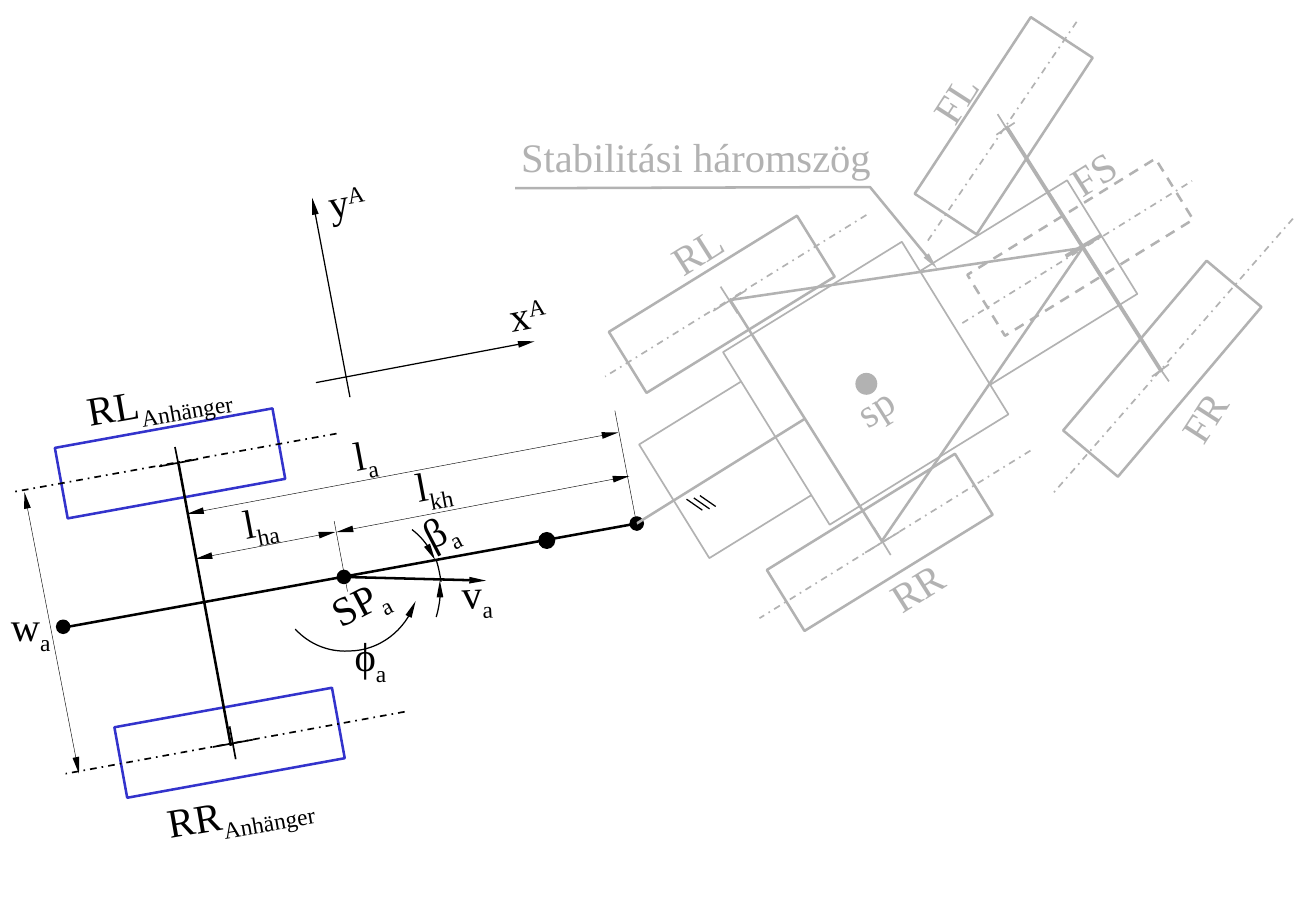
import dataclasses
import lxml.etree
import pptx
import pptx.dml.color
import pptx.enum.dml
import pptx.enum.shapes
import pptx.enum.text
import pptx.oxml.ns
import pptx.util

BLACK, GREY, BLUE, WHITE = "000000", "B2B2B2", "3333CC", "FFFFFF"
DASH_DOT = pptx.enum.dml.MSO_LINE.DASH_DOT
DASH = pptx.enum.dml.MSO_LINE.DASH
RECTANGLE = pptx.enum.shapes.MSO_SHAPE.RECTANGLE
OVAL = pptx.enum.shapes.MSO_SHAPE.OVAL
SUB, SUPER = -25000, 30000


def rgb(value):
    """Turn a hex string into a colour."""
    return pptx.dml.color.RGBColor.from_string(value)


def apply(target, values):
    """Set attributes of an object from a dict."""
    for name, value in values.items():
        setattr(target, name, value)


def add_child(parent, tag, **attributes):
    """Append a DrawingML element with the given attributes."""
    lxml.etree.SubElement(parent, pptx.oxml.ns.qn(tag), attributes)


def paint(shape, color, weight, dash=None, arrows=""):
    """Style an outline and put arrowheads at its head or tail."""
    shape.line.color.rgb = rgb(color)
    apply(shape.line, {"width": pptx.util.Pt(weight), "dash_style": dash})
    for end in ("head", "tail"):
        if end in arrows:
            add_child(shape.line._get_or_add_ln(), f"a:{end}End", type="triangle", w="sm", len="lg")


@dataclasses.dataclass
class Region:
    """A drawing area whose parts are placed from its left top corner."""

    shapes: object
    left: float
    top: float
    color: str

    def point(self, x, y):
        """Give the slide position of a point in the region."""
        return pptx.util.Inches(self.left + x), pptx.util.Inches(self.top + y)

    def line(self, x1, y1, x2, y2, weight=1, dash=None, arrows=""):
        """Draw a straight line."""
        link = self.shapes.add_connector(
            pptx.enum.shapes.MSO_CONNECTOR.STRAIGHT, *self.point(x1, y1), *self.point(x2, y2))
        paint(link, self.color, weight, dash, arrows)
        add_child(link._element.spPr, "a:effectLst")

    def preset(self, kind, x, y, width, height, turn=0, weight=1.5, color=None, fill=None, dash=None):
        """Draw a rectangle or an ellipse."""
        shape = self.shapes.add_shape(
            kind, *self.point(x, y), pptx.util.Inches(width), pptx.util.Inches(height))
        shape.rotation = turn
        shape.shadow.inherit = False
        if fill:
            shape.fill.solid()
            shape.fill.fore_color.rgb = rgb(fill)
        else:
            shape.fill.background()
        paint(shape, color or self.color, weight, dash)

    def dot(self, x, y, size):
        """Draw a filled point around a centre."""
        self.preset(OVAL, x - size / 2, y - size / 2, size, size, weight=0.75, fill=self.color)

    def outline(self, points, weight, arrows=""):
        """Draw an open line through points."""
        start, *rest = [self.point(*point) for point in points]
        builder = self.shapes.build_freeform(*start, scale=1.0)
        builder.add_line_segments(rest, close=False)
        shape = builder.convert_to_shape()
        shape.shadow.inherit = False
        shape.fill.background()
        paint(shape, self.color, weight, arrows=arrows)

    def curve(self, controls, arrows=""):
        """Draw a chain of cubic curves."""
        points, steps = [controls[0]], 16
        for first in range(0, len(controls) - 1, 3):
            for step in range(1, steps + 1):
                t = step / steps
                weights = ((1 - t) ** 3, 3 * t * (1 - t) ** 2, 3 * t * t * (1 - t), t ** 3)
                part = controls[first:first + 4]
                points.append([sum(w * p[axis] for w, p in zip(weights, part)) for axis in (0, 1)])
        self.outline(points, 0.75, arrows)

    def label(self, text, x, y, width, turn=0, index="", shift=SUB, inset=0.1):
        """Write a label with an optional index."""
        box = self.shapes.add_textbox(
            *self.point(x, y), pptx.util.Inches(width), pptx.util.Inches(0.5))
        box.rotation = turn
        apply(box.text_frame, {
            "word_wrap": False, "auto_size": pptx.enum.text.MSO_AUTO_SIZE.SHAPE_TO_FIT_TEXT,
            "margin_left": pptx.util.Inches(inset), "margin_right": pptx.util.Inches(inset)})
        for words, baseline in ((text, 0), (index, shift)):
            if words:
                run = box.text_frame.paragraphs[0].add_run()
                run.text = words
                apply(run.font, {"name": "Times New Roman", "size": pptx.util.Pt(24)})
                run.font.color.rgb = rgb(self.color)
                if baseline:
                    run._r.get_or_add_rPr().set("baseline", str(baseline))


def draw_trailer(shapes, left, top):
    """Draw the trailer with its wheels, axle and drawbar."""
    trailer = Region(shapes, left, top, BLACK)
    for x, y in ((0.49, 0.52), (0.98, 2.82)):
        trailer.preset(RECTANGLE, x, y, 1.82, 0.59, 349.7, color=BLUE)
    for ends in ((1.44, 0.68, 1.49, 0.93), (1.31, 0.84, 1.63, 0.78),
                 (1.89, 2.98, 1.94, 3.25), (1.75, 3.15, 2.08, 3.09)):
        trailer.line(*ends)
    for ends in ((2.77, 0.57, 0.11, 1.05), (3.33, 2.86, 0.54, 3.37)):
        trailer.line(*ends, dash=DASH_DOT)
    for ends in ((0.56, 2.16, 5.24, 1.31), (1.47, 0.82, 1.9, 3.14)):
        trailer.line(*ends, weight=1.5)
    for x, y, size in ((5.24, 1.31, 0.11), (0.52, 2.16, 0.11), (4.5, 1.45, 0.13), (2.83, 1.75, 0.11)):
        trailer.dot(x, y, size)
    trailer.label("RL", 0.61, 0.02, 1.5, 350.1, "Anhänger")
    trailer.label("RR", 1.27, 3.41, 1.52, 350.1, "Anhänger")


def draw_dimensions(shapes, left, top):
    """Draw the lengths, angles and speed of the trailer."""
    dimensions = Region(shapes, left, top, BLACK)
    for ends in ((2.75, 1.29, 2.86, 1.87), (5.06, 0.38, 5.25, 1.37)):
        dimensions.line(*ends, weight=0.25)
    for ends in ((2.77, 1.38, 5.18, 0.92), (1.54, 1.23, 5.09, 0.56),
                 (1.61, 1.6, 2.76, 1.38), (0.2, 1.05, 0.65, 3.37)):
        dimensions.line(*ends, weight=0.25, arrows="head tail")
    dimensions.line(2.84, 1.75, 4, 1.78, 1.5, arrows="tail")
    for controls, arrows in (
            (((3.42, 1.95), (3.34, 2.19), (3.12, 2.36), (2.87, 2.36),
              (2.7, 2.37), (2.54, 2.3), (2.43, 2.18)), "head"),
            (((3.39, 1.36), (3.47, 1.42), (3.54, 1.51), (3.58, 1.61)), "tail"),
            (((3.59, 1.61), (3.61, 1.67), (3.62, 1.73), (3.63, 1.79)), ""),
            (((3.62, 1.78), (3.63, 1.88), (3.62, 1.98), (3.59, 2.08)), "head")):
        dimensions.curve(controls, arrows)
    for symbol, index, x, y, width, turn in (
            ("SP", "a", 2.62, 1.7, 0.67, 332.4), ("l", "a", 2.81, 0.48, 0.39, 349.3),
            ("l", "kh", 3.32, 0.73, 0.52, 349.3), ("l", "ha", 1.9, 1.03, 0.5, 349.3),
            ("β", "a", 3.38, 1.1, 0.48, 332.4), ("v", "a", 3.7, 1.63, 0.47, 357.3),
            ("ϕ", "a", 2.82, 2.15, 0.5, 0)):
        dimensions.label(symbol, x, y, width, turn, index)
    dimensions.label("w", 0.09, 1.9, 0.34, index="a", inset=0)


def draw_vehicle(shapes, left, top):
    """Draw the towing vehicle with its stability triangle."""
    vehicle = Region(shapes.add_group_shape().shapes, left, top, GREY)
    vehicle.preset(RECTANGLE, 1.24, 2.49, 4.14, 1.1, 328.3, 1)
    vehicle.preset(RECTANGLE, 2.26, 2.32, 1.73, 1.67, 328.3, 1, fill=WHITE)
    for x, y, width, height, turn, dash in (
            (1.03, 2.21, 1.82, 0.59, 328.3, None), (2.33, 4.17, 1.82, 0.59, 328.3, None),
            (3.39, 0.73, 1.74, 0.61, 303.3, None), (4.65, 2.74, 1.83, 0.59, 310.2, None),
            (3.98, 1.74, 1.82, 0.59, 328.3, DASH)):
        vehicle.preset(RECTANGLE, x, y, width, height, turn, dash=dash)
    for ends in ((1.93, 2.36, 2.07, 2.58), (1.87, 2.56, 2.14, 2.39), (3.19, 4.34, 3.33, 4.57),
                 (3.12, 4.55, 3.4, 4.38), (4.2, 1.11, 4.35, 1.01), (4.21, 0.94, 4.34, 1.15),
                 (5.48, 2.94, 5.62, 3.14), (5.48, 3.1, 5.62, 3)):
        vehicle.line(*ends)
    for ends in ((3.92, 2.66, 5.81, 1.49), (3.13, 1.77, 0.98, 3.1), (4.48, 3.71, 2.25, 5.09),
                 (4.86, 0.18, 3.63, 1.99), (6.64, 1.8, 4.65, 4.08)):
        vehicle.line(*ends, dash=DASH_DOT)
    for ends in ((1.24, 4.31, 2.62, 3.45), (2.01, 2.47, 3.26, 4.46),
                 (4.91, 2.04, 3.26, 4.45), (2.01, 2.47, 4.92, 2.04)):
        vehicle.line(*ends, weight=1.5)
    for ends in ((4.28, 1.04, 5.56, 3.06), (4.77, 2.11, 5.06, 1.94)):
        vehicle.line(*ends, weight=2.25)
    vehicle.line(4.84, 1.91, 4.98, 2.14, dash=DASH)
    vehicle.dot(3.13, 3.16, 0.17)
    for name, x, y, width, turn in (
            ("RL", 1.42, 1.81, 0.63, 327.6), ("RR", 3.22, 4.58, 0.65, 327.6),
            ("FL", 3.56, 0.56, 0.59, 302.8), ("FR", 5.6, 3.18, 0.61, 302.8),
            ("FS", 4.71, 1.17, 0.57, 327.7), ("sp", 2.95, 3.09, 0.5, 327.6),
            ("Stabilitási háromszög", 0.19, 1.04, 3.1, 0)):
        vehicle.label(name, x, y, width, turn)
    vehicle.outline(((0.24, 1.55), (3.16, 1.54), (3.71, 2.21)), 1.5, "tail")
    hatching = Region(shapes, left, top, BLACK)
    for x, y in ((1.65, 4.11), (1.71, 4.1), (1.76, 4.08)):
        hatching.line(x, y, x + 0.13, y + 0.09, 0.75)


def draw_axes(shapes, left, top):
    """Draw the coordinate axes of the trailer."""
    axes = Region(shapes.add_group_shape().shapes, left, top, BLACK)
    for ends in ((0.6, 2.15, 2.4, 1.81), (0.88, 2.27, 0.57, 0.63)):
        axes.line(*ends, weight=0.75, arrows="tail")
    for name, x, y in (("y", 0.6, 0.4), ("x", 2.09, 1.33)):
        axes.label(name, x, y, 0.53, 349.6, "A", SUPER)


def main():
    """Build the slide and save it."""
    deck = pptx.Presentation()
    apply(deck, {"slide_width": pptx.util.Inches(10.83), "slide_height": pptx.util.Inches(7.5)})
    shapes = deck.slides.add_slide(deck.slide_layouts[6]).shapes
    draw_trailer(shapes, 0, 3)
    draw_vehicle(shapes, 4, 0)
    draw_dimensions(shapes, 0, 3)
    draw_axes(shapes, 2, 1)
    deck.save("out.pptx")


if __name__ == "__main__":
    main()
